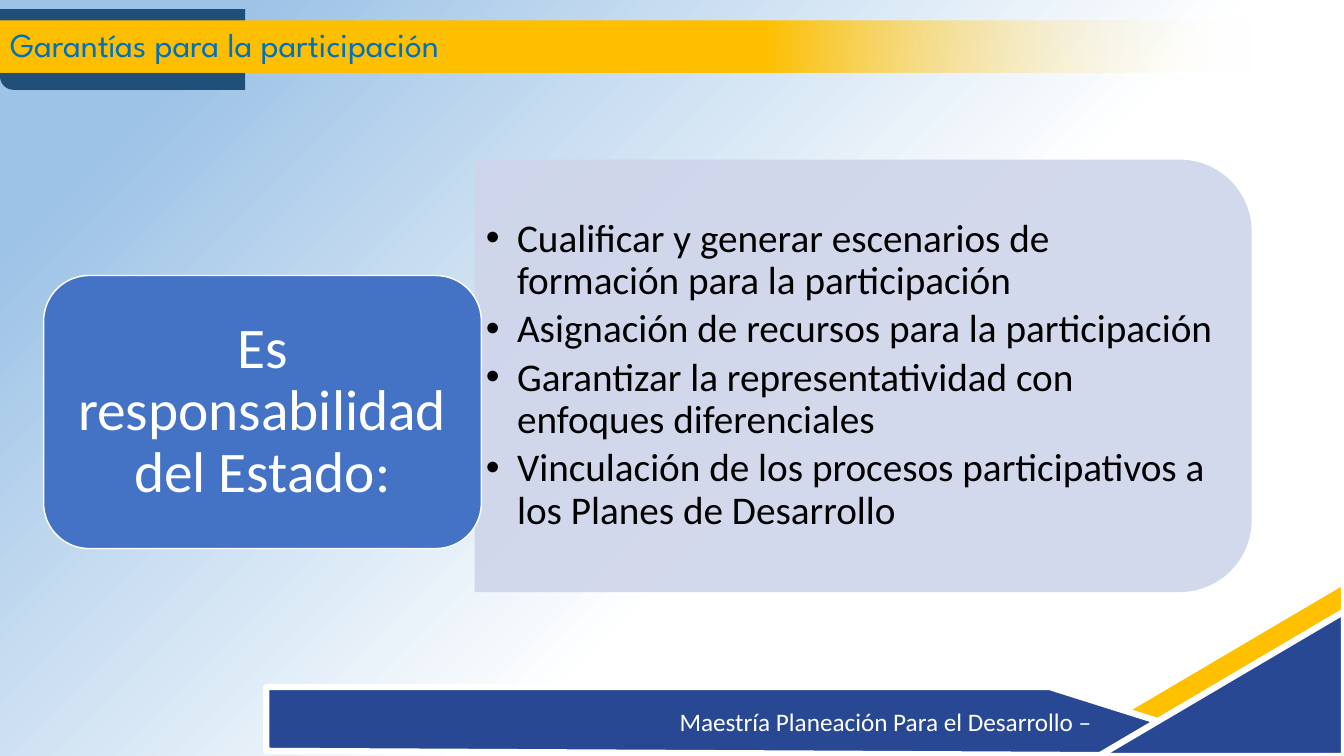
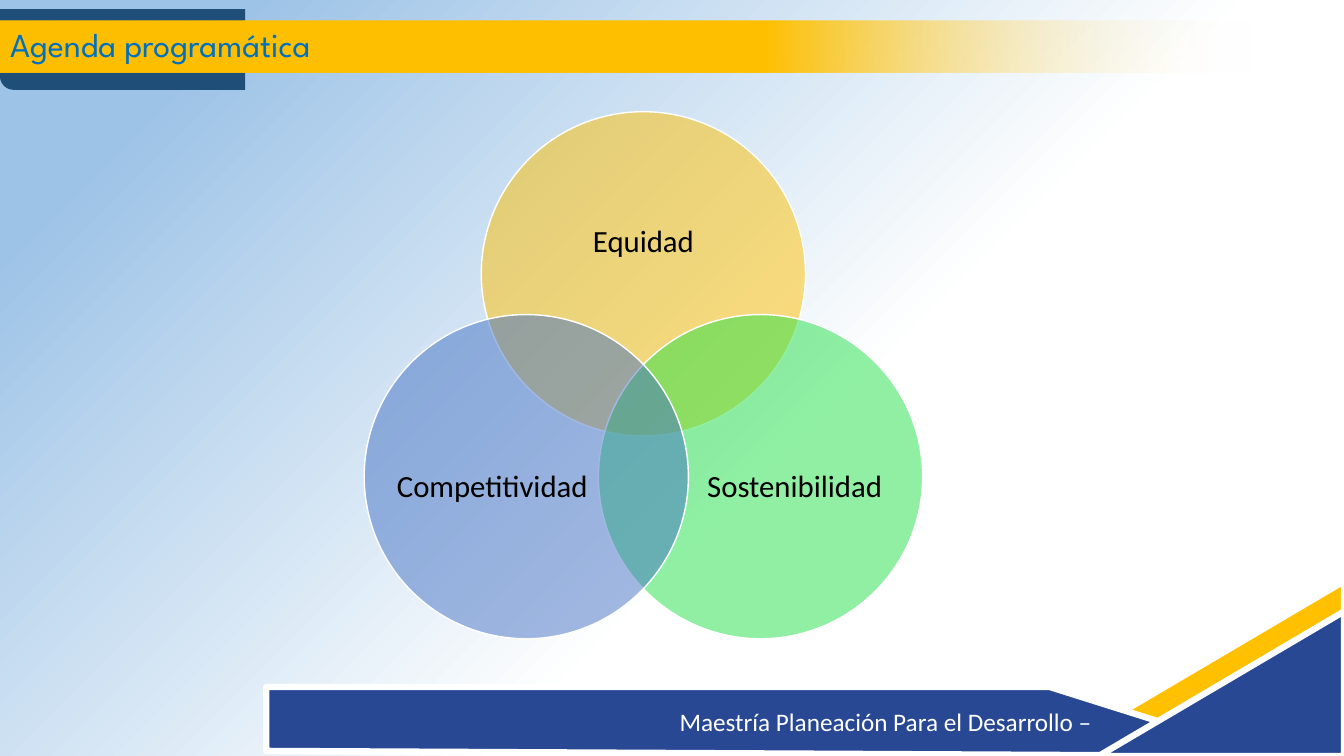
import math
import pptx
import pptx.util
import pptx.dml.color
import pptx.enum.shapes
import pptx.enum.text
import pptx.oxml
import pptx.oxml.ns

HUES = {
    "gold": "FFC000", "navy": "284894", "ink": "1F4E79", "sky": "9DC3E6",
    "white": "FFFFFF", "black": "000000", "title": "0070C0",
    "mist": "CFD5EA", "blue": "4472C4", "green": "23E148",
}
FORM = pptx.enum.shapes.MSO_SHAPE
ALIGN = pptx.enum.text.PP_ALIGN
qn = pptx.oxml.ns.qn

deck = pptx.Presentation()
deck.slide_width = pptx.util.Inches(13.33)
deck.slide_height = pptx.util.Inches(7.5)
COLS, ROWS = 160, 90
COL, ROW = deck.slide_width / COLS, deck.slide_height / ROWS


def paint(shape, fill, line=None, width=1, alpha=None):
    shape.shadow.inherit = False
    shape.fill.solid()
    shape.fill.fore_color.rgb = pptx.dml.color.RGBColor.from_string(HUES[fill])
    if alpha is not None:
        hue = shape.element.spPr.find(".//" + qn("a:srgbClr"))
        pptx.oxml.ns.qn("a:alpha")
        hue.append(hue.makeelement(qn("a:alpha"), {"val": str(alpha * 1000)}))
    if line:
        shape.line.color.rgb = pptx.dml.color.RGBColor.from_string(HUES[line])
        shape.line.width = pptx.util.Pt(width)
    else:
        shape.line.fill.background()


def write(shape, *texts, size, hue, font="Calibri", align=ALIGN.LEFT,
          pads=(0.1, 0.05), space=0.9, after=0, dot=None):
    frame = shape.text_frame
    frame.word_wrap = True
    frame.auto_size = pptx.enum.text.MSO_AUTO_SIZE.NONE
    frame.vertical_anchor = pptx.enum.text.MSO_ANCHOR.MIDDLE
    frame.margin_left = frame.margin_right = pptx.util.Inches(pads[0])
    frame.margin_top = frame.margin_bottom = pptx.util.Inches(pads[1])
    for i, text in enumerate(texts):
        para = frame.paragraphs[0] if i == 0 else frame.add_paragraph()
        para.text = text
        if dot:
            props = para._p.get_or_add_pPr()
            hang = pptx.util.Inches(0.31)
            props.set("marL", str(hang))
            props.set("indent", str(-hang))
            props.append(props.makeelement(qn("a:buChar"), {"char": dot}))
        para.alignment = align
        para.line_spacing = space
        para.space_before = pptx.util.Pt(0)
        para.space_after = pptx.util.Pt(after)
        para.font.size = pptx.util.Pt(size)
        para.font.name = font
        para.font.color.rgb = pptx.dml.color.RGBColor.from_string(HUES[hue])


state = deck.slides.add_slide(deck.slide_layouts[1])
agenda = deck.slides.add_slide(deck.slide_layouts[5])
master = deck.slide_master

wedges = []
for hue, top in (("gold", 69.2), ("navy", 72.8)):
    wedge = state.shapes.add_shape(
        FORM.RIGHT_TRIANGLE, int(130.8 * COL), int(top * ROW), int(29.2 * COL), int(17.2 * ROW))
    paint(wedge, hue, "white", 4.5)
    wedge.element.spPr.xfrm.set("flipH", "1")
    wedges.append(wedge)

edge = [(int(x * COL), int(y * ROW)) for x, y in ((31.7, 81.8), (125, 81.8), (151, 90), (31.7, 89.4))]
pen = state.shapes.build_freeform(*edge[0])
pen.add_line_segments(edge[1:], close=True)
foot = pen.convert_to_shape()
paint(foot, "navy", "white", 4.5)
write(foot, "Maestría Planeación Para el Desarrollo –", size=18, hue="white", space=1)
foot.text_frame.margin_left = int(49.2 * COL)

tab = state.shapes.add_shape(FORM.ROUND_1_RECTANGLE, 0, int(1.1 * ROW), int(29.2 * COL), int(9.6 * ROW))
paint(tab, "ink")
tab.element.spPr.xfrm.set("flipH", "1")
tab.element.spPr.xfrm.set("flipV", "1")

for i, part in enumerate((wedges[0], foot, wedges[1], tab)):
    part.element.nvSpPr.cNvPr.set("id", str(20 + i))
    master.shapes.element.append(part.element)

blends = [(master.background.fill, 315, (("sky", 0.12), ("white", 0.6)))]
for slide, text in ((state, "Garantías para la participación"), (agenda, "Agenda programática")):
    head = slide.shapes.title
    head.left, head.top, head.width, head.height = 0, int(2.5 * ROW), int(149 * COL), int(6.1 * ROW)
    write(head, text, size=24, hue="title", font="League Spartan")
    blends.append((head.fill, 0, (("gold", 0.61), ("white", 1))))

for fill, angle, stops in blends:
    fill.gradient()
    fill.gradient_angle = angle
    for stop, (hue, place) in zip(fill.gradient_stops, stops):
        stop.position = place
        stop.color.rgb = pptx.dml.color.RGBColor.from_string(HUES[hue])

for slide in (state, agenda):
    last = slide.shapes.title.element.spPr.findall(".//" + qn("a:srgbClr"))[-1]
    last.append(last.makeelement(qn("a:alpha"), {"val": "0"}))

panel = state.shapes.add_shape(
    FORM.ROUND_2_SAME_RECTANGLE, int(77 * COL), int(-1.5 * ROW), int(51.5 * COL), int(92.5 * ROW))
panel.rotation = 90
paint(panel, "mist", alpha=90)

tasks = state.placeholders[1]
tasks.left, tasks.top, tasks.width, tasks.height = (
    int(56.4 * COL), int(21.5 * ROW), int(90 * COL), int(46.4 * ROW))
write(tasks,
      "Cualificar y generar escenarios de formación para la participación",
      "Asignación de recursos para la participación",
      "Garantizar la representatividad con enfoques diferenciales",
      "Vinculación de los procesos participativos a los Planes de Desarrollo",
      size=28, hue="black", pads=(0.12, 0.06), after=4.2, dot="•")
state.shapes.element.append(tasks.element)

role = state.shapes.add_shape(
    FORM.ROUNDED_RECTANGLE, int(5.2 * COL), int(32.8 * ROW), int(52.1 * COL), int(32.5 * ROW))
paint(role, "blue", "white")
write(role, "Es responsabilidad del Estado:", size=41, hue="white", align=ALIGN.CENTER, pads=(0.17, 0.09))

MID_X, MID_Y, REACH, SIZE = 76.6, 48.7, 16.1, 38.6
goals = (("Equidad", "gold", 0, -19.8), ("Sostenibilidad", "green", 18, 9.4),
         ("Competitividad", "blue", -18, 9.4))
for i, (name, hue, dx, dy) in enumerate(goals):
    turn = math.radians(120 * i - 90)
    left = MID_X + REACH * math.cos(turn) - SIZE / 2
    top = MID_Y + REACH * math.sin(turn) - SIZE / 2
    disc = agenda.shapes.add_shape(
        FORM.OVAL, int(left * COL), int(top * ROW), int(SIZE * COL), int(SIZE * ROW))
    paint(disc, hue, "white", alpha=50)
    label = agenda.shapes.add_textbox(
        int((MID_X + dx - 12) * COL), int((MID_Y + dy - 9) * ROW), int(24 * COL), int(18 * ROW))
    write(label, name, size=22, hue="black", align=ALIGN.CENTER, pads=(0, 0))

deck.save("out.pptx")
